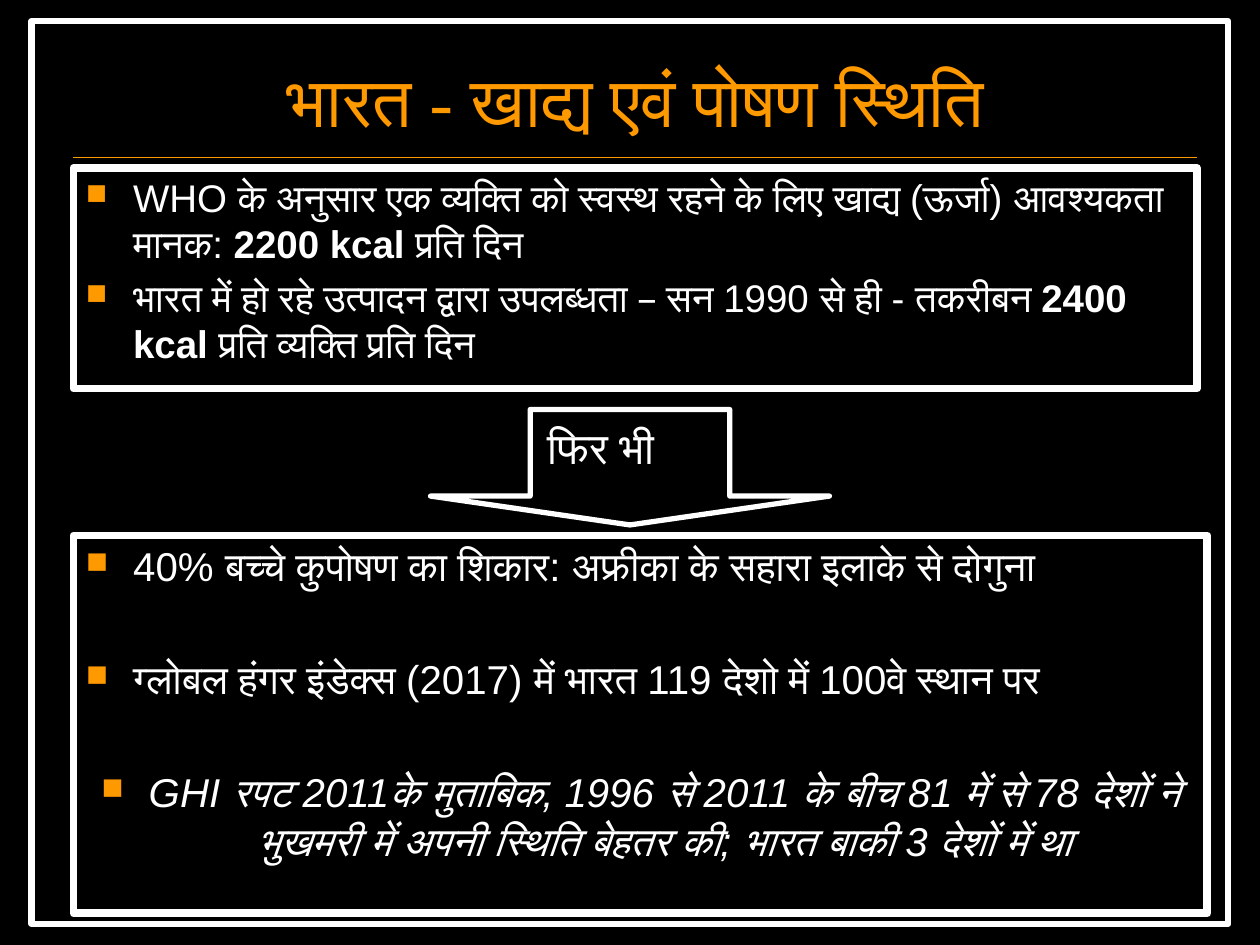
from pptx import Presentation
from pptx.dml.color import RGBColor
from pptx.enum.shapes import MSO_CONNECTOR as Connector, MSO_SHAPE as Shape
from pptx.enum.text import MSO_ANCHOR as Anchor, PP_ALIGN as Align
from pptx.oxml.ns import qn
from pptx.util import Pt
from lxml.etree import SubElement

BLACK, WHITE, ORANGE = "000000", "FFFFFF", "FF9900"
INDENT = 27

NEEDS = [
    [("WHO के अनुसार एक व्यक्ति को स्वस्थ रहने के लिए खाद्य (ऊर्जा) आवश्यकता मानक: ", False),
     ("2200 kcal", True), (" प्रति दिन", False)],
    [("भारत में हो रहे उत्पादन द्वारा उपलब्धता – सन 1990 से ही - तकरीबन ", False),
     ("2400 kcal", True), (" प्रति व्यक्ति प्रति दिन", False)],
]
OUTCOMES = [
    [("40% बच्चे कुपोषण का शिकार: अफ्रीका के सहारा इलाके से दोगुना", False)],
    [("ग्लोबल हंगर इंडेक्स (2017) में भारत 119 देशो में 100वे स्थान पर", False)],
    [("GHI रपट 2011के मुताबिक, 1996 से 2011 के बीच 81 में से 78 देशों ने "
      "भुखमरी में अपनी स्थिति बेहतर की; भारत बाकी 3 देशों में था", False)],
]


def color(value):
    """Turn a hex string into a colour."""
    return RGBColor.from_string(value)


def set_font(paragraph, size, name="Arial", value=WHITE):
    """Set the font of a whole paragraph."""
    font = paragraph.font
    font.size, font.name = Pt(size), name
    font.color.rgb = color(value)


def add_outline(slide, kind, box, width, fill=None):
    """Add a white outlined shape, hollow unless a fill is given."""
    shape = slide.shapes.add_shape(kind, *map(Pt, box))
    shape.shadow.inherit = False
    if fill:
        shape.fill.solid()
        shape.fill.fore_color.rgb = color(fill)
    else:
        shape.fill.background()
    shape.line.color.rgb = color(WHITE)
    shape.line.width = Pt(width)
    return shape


def add_bullet(paragraph):
    """Give a paragraph a hanging orange square."""
    properties = paragraph._p.get_or_add_pPr()
    properties.set("marL", str(Pt(INDENT)))
    properties.set("indent", str(Pt(-INDENT)))
    bullet_color = SubElement(properties, qn("a:buClr"))
    SubElement(bullet_color, qn("a:srgbClr"), val=ORANGE)
    SubElement(properties, qn("a:buSzPct"), val="75000")
    SubElement(properties, qn("a:buChar"), char="■")


def add_title(slide, box, text):
    """Add the title with the rule below it."""
    left, top, width, height = box
    frame = slide.shapes.add_textbox(*map(Pt, box)).text_frame
    frame.word_wrap = True
    frame.vertical_anchor = Anchor.BOTTOM
    paragraph = frame.paragraphs[0]
    paragraph.text = text
    paragraph.alignment = Align.CENTER
    paragraph.line_spacing = 0.8
    set_font(paragraph, 40, "Times New Roman", ORANGE)
    rule_top = Pt(top + height + 6)
    rule = slide.shapes.add_connector(
        Connector.STRAIGHT, Pt(left), rule_top, Pt(left + width), rule_top)
    rule.line.color.rgb = color(ORANGE)
    rule.line.width = Pt(1)
    SubElement(rule._element.spPr, qn("a:effectLst"))


def add_bullet_box(slide, box, items, size, gap):
    """Add a framed bullet list and return its paragraphs."""
    frame = add_outline(slide, Shape.RECTANGLE, box, 4.5).text_frame
    frame.word_wrap = True
    frame.vertical_anchor = Anchor.TOP
    for index, runs in enumerate(items):
        paragraph = frame.add_paragraph() if index else frame.paragraphs[0]
        paragraph.alignment = Align.LEFT
        paragraph.space_before = Pt(gap if index else size * 0.2)
        set_font(paragraph, size)
        add_bullet(paragraph)
        for text, bold in runs:
            run = paragraph.add_run()
            run.text = text
            run.font.bold = bold
    return frame.paragraphs


def add_arrow(slide, box, text):
    """Add the down arrow with its label."""
    left, top, width, height = box
    arrow = add_outline(slide, Shape.DOWN_ARROW, box, 3)
    arrow.adjustments[0], arrow.adjustments[1] = 0.5, 0.25
    label = slide.shapes.add_textbox(Pt(left + 60), Pt(top + 6), Pt(102), Pt(35))
    label.text_frame.word_wrap = True
    paragraph = label.text_frame.paragraphs[0]
    paragraph.text = text
    paragraph.line_spacing = 0.9
    paragraph.space_before = Pt(5)
    set_font(paragraph, 25)


def main():
    """Build and save the slide."""
    presentation = Presentation()
    presentation.slide_width, presentation.slide_height = Pt(720), Pt(540)
    slide = presentation.slides.add_slide(presentation.slide_layouts[6])
    slide.background.fill.solid()
    slide.background.fill.fore_color.rgb = color(BLACK)
    add_outline(slide, Shape.RECTANGLE, (18, 12, 684, 516), 3.5, BLACK)
    add_title(slide, (42, 12, 642, 72), "भारत - खाद्य एवं पोषण स्थिति")
    add_bullet_box(slide, (42, 96, 642, 126), NEEDS, 22, 4.4)
    add_arrow(slide, (246, 234, 228, 66), "फिर भी")
    outcomes = add_bullet_box(slide, (42, 306, 648, 216), OUTCOMES, 23, 37)
    outcomes[-1].alignment = Align.CENTER
    outcomes[-1].font.italic = True
    for run in outcomes[-1].runs:
        run.font.italic = True
    presentation.save("out.pptx")


if __name__ == "__main__":
    main()
